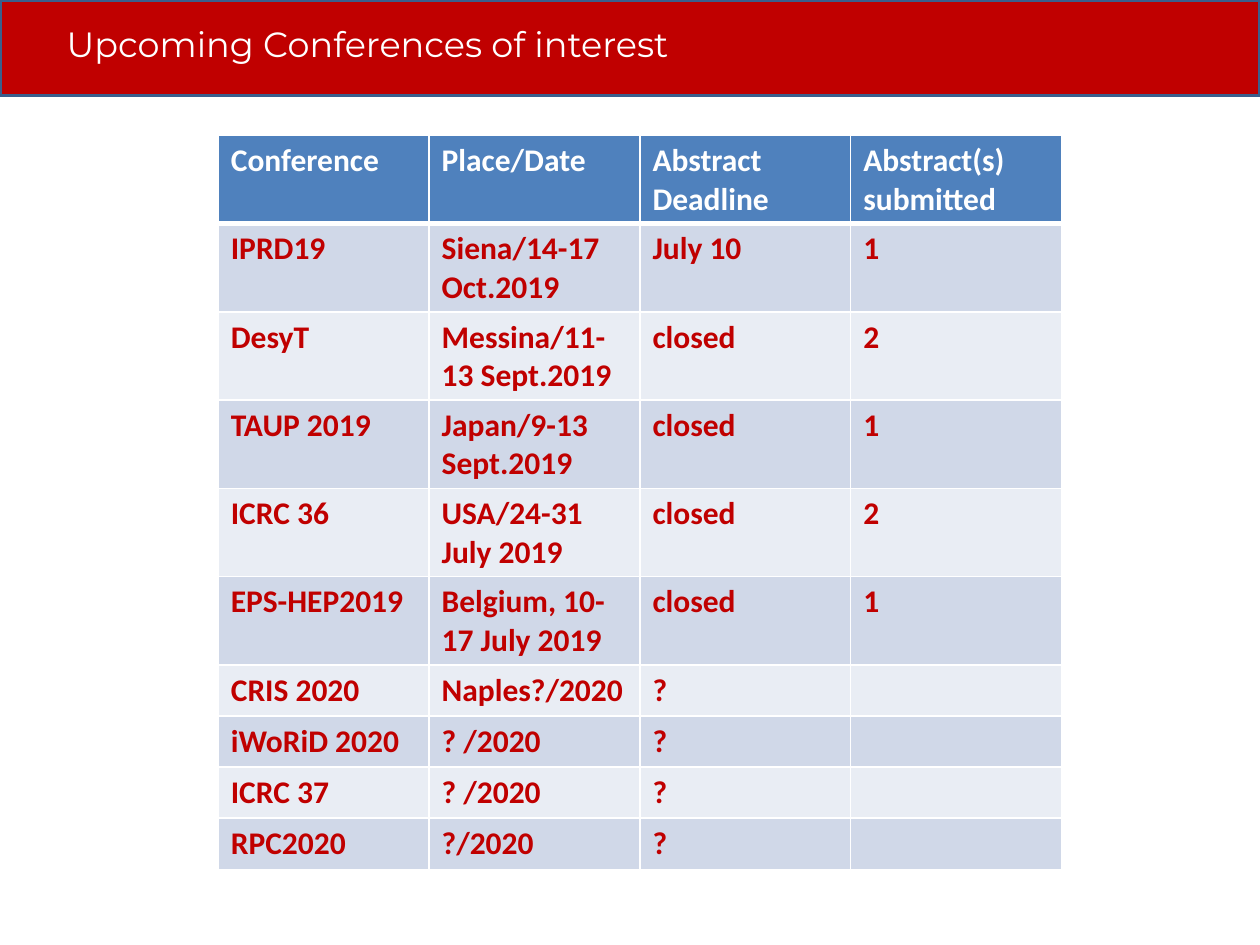
from dataclasses import dataclass

from lxml.etree import SubElement
from pptx import Presentation
from pptx.dml.color import RGBColor
from pptx.enum.shapes import MSO_SHAPE as Preset
from pptx.enum.text import MSO_ANCHOR as Anchor, MSO_AUTO_SIZE as AutoSize, PP_ALIGN as Align
from pptx.oxml.ns import qn
from pptx.util import Cm, Pt


@dataclass(frozen=True)
class Theme:
    red: str = "C00000"
    white: str = "FFFFFF"
    band_line: str = "3A5F8C"
    header_fill: str = "4F81BD"
    row_fills: tuple = ("D0D8E8", "E9EDF4")
    title_font: str = "Montserrat"
    body_font: str = "Calibri"
    title_size: int = 20
    body_size: int = 18
    rule: int = 1
    header_rule: int = 3


CONFERENCES = [
    ("Conference", "Place/Date", "Abstract Deadline", "Abstract(s) submitted"),
    ("IPRD19", "Siena/14-17 Oct.2019", "July 10", "1"),
    ("DesyT", "Messina/11-13 Sept.2019", "closed", "2"),
    ("TAUP 2019", "Japan/9-13 Sept.2019", "closed", "1"),
    ("ICRC 36", "USA/24-31 July 2019", "closed", "2"),
    ("EPS-HEP2019", "Belgium, 10-17 July 2019", "closed", "1"),
    ("CRIS 2020", "Naples?/2020", "?", ""),
    ("iWoRiD 2020", "? /2020", "?", ""),
    ("ICRC 37", "? /2020", "?", ""),
    ("RPC2020", "?/2020", "?", ""),
]


def write_text(frame, text, font, size, color, bold=False):
    paragraph = frame.paragraphs[0]
    paragraph.alignment = Align.LEFT
    paragraph.font.size = Pt(size)
    if text:
        run = paragraph.add_run()
        run.text = text
        run.font.name = font
        run.font.size = Pt(size)
        run.font.bold = bold
        run.font.color.rgb = RGBColor.from_string(color)


def set_borders(cell, color, widths):
    properties = cell._tc.get_or_add_tcPr()
    for side, width in widths.items():
        line = SubElement(properties, qn(f"a:ln{side}"), w=str(Pt(width)))
        fill = SubElement(line, qn("a:solidFill"))
        SubElement(fill, qn("a:srgbClr"), val=color)


class SlideBuilder:
    def __init__(self, slide, theme):
        self.slide = slide
        self.theme = theme

    def title(self, text, left, top, width, height):
        title = self.slide.shapes.title
        title.left, title.top = Cm(left), Cm(top)
        title.width, title.height = Cm(width), Cm(height)
        frame = title.text_frame
        frame.word_wrap = True
        frame.auto_size = AutoSize.SHAPE_TO_FIT_TEXT
        frame.vertical_anchor = Anchor.TOP
        write_text(frame, text, font=self.theme.title_font,
                   size=self.theme.title_size, color=self.theme.white)

    def title_band(self, width, height):
        band = self.slide.shapes.add_shape(Preset.RECTANGLE, 0, 0, Cm(width), Cm(height))
        band.shadow.inherit = False
        band.fill.solid()
        band.fill.fore_color.rgb = RGBColor.from_string(self.theme.red)
        band.line.color.rgb = RGBColor.from_string(self.theme.band_line)
        band.line.width = Pt(2)
        self.slide.shapes.title.element.addprevious(band.element)

    def table(self, rows, left, top, column_width, row_height):
        theme = self.theme
        columns = len(rows[0])
        table = self.slide.shapes.add_table(
            len(rows), columns, Cm(left), Cm(top),
            Cm(column_width * columns), Cm(row_height * len(rows))).table
        for column in table.columns:
            column.width = Cm(column_width)
        for index, values in enumerate(rows):
            table.rows[index].height = Cm(row_height)
            header = index == 0
            fill = theme.header_fill if header else theme.row_fills[(index - 1) % 2]
            borders = dict.fromkeys("LRTB", theme.rule)
            if header:
                borders["B"] = theme.header_rule
            elif index == 1:
                borders["T"] = theme.header_rule
            for position, value in enumerate(values):
                cell = table.cell(index, position)
                set_borders(cell, theme.white, borders)
                cell.fill.solid()
                cell.fill.fore_color.rgb = RGBColor.from_string(fill)
                write_text(cell.text_frame, value, font=theme.body_font,
                           size=theme.body_size, bold=True,
                           color=theme.white if header else theme.red)


def main():
    presentation = Presentation()
    presentation.slide_width, presentation.slide_height = Cm(25.4), Cm(19.05)
    slide = presentation.slides.add_slide(presentation.slide_layouts[5])
    builder = SlideBuilder(slide, Theme())
    builder.title_band(25.4, 1.93)
    builder.title("Upcoming Conferences of interest", 1.09, 0.33, 20.6, 1.11)
    builder.table(CONFERENCES, left=4.4, top=2.73, column_width=4.25, row_height=1.03)
    presentation.save("out.pptx")


if __name__ == "__main__":
    main()
